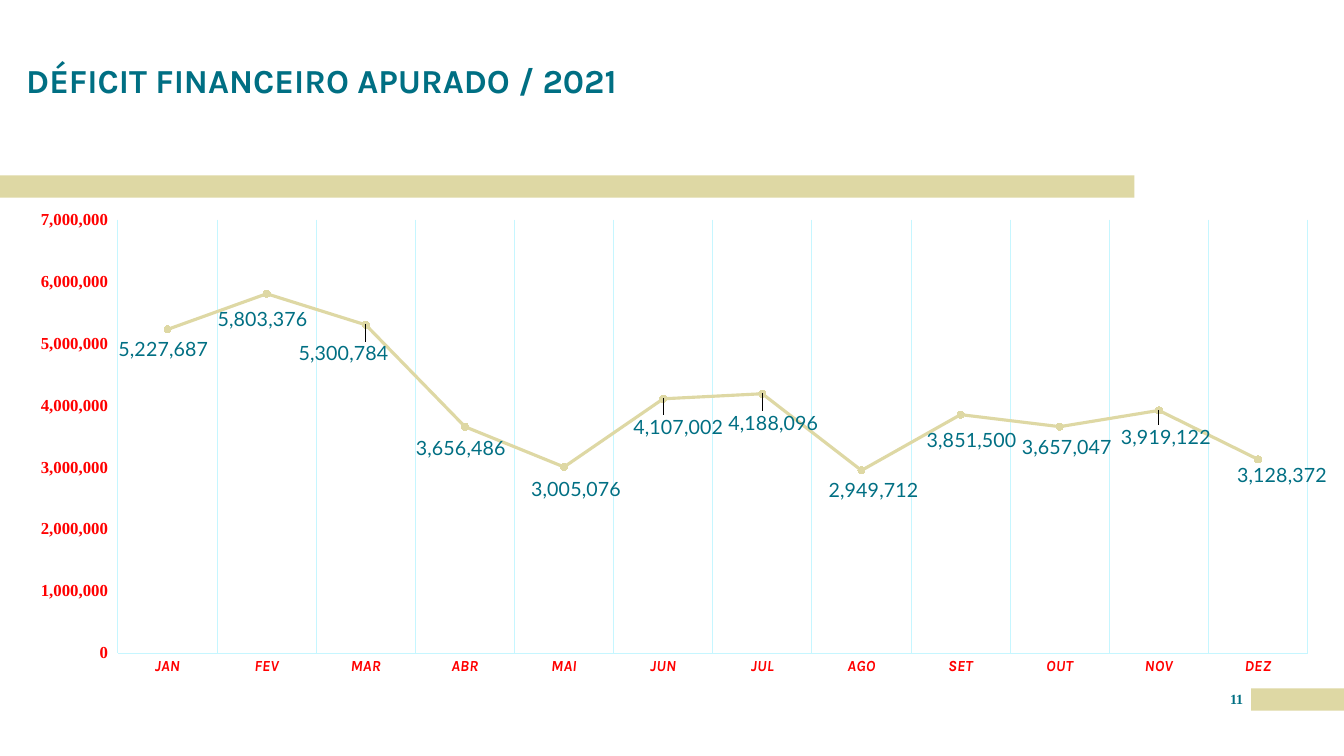
import dataclasses

import lxml.etree
import pptx
import pptx.chart.data
import pptx.dml.color
import pptx.enum.chart
import pptx.enum.shapes
import pptx.enum.text
import pptx.oxml
import pptx.oxml.ns
import pptx.util

Inches = pptx.util.Inches
Pt = pptx.util.Pt
RGBColor = pptx.dml.color.RGBColor
qn = pptx.oxml.ns.qn

TEAL = RGBColor(0x00, 0x6F, 0x83)
SAND = RGBColor(0xDE, 0xD8, 0xA4)
RED = RGBColor(0xFF, 0x00, 0x00)
ICE = RGBColor(0xC6, 0xF6, 0xFF)
WHITE = RGBColor(0xFF, 0xFF, 0xFF)
SERIF = "Times New Roman"


@dataclasses.dataclass(frozen=True)
class Box:
    left: float
    top: float
    width: float
    height: float

    def place(self) -> tuple:
        return tuple(map(Inches, dataclasses.astuple(self)))


@dataclasses.dataclass(frozen=True)
class Month:
    name: str
    value: int
    right: float
    down: float


BARS = [Box(12.41, 6.83, 0.92, 0.22), Box(0, 1.74, 11.25, 0.22)]
TITLE = Box(0.16, 0.4, 12.99, 0.83)
PAGE = Box(12.12, 6.85, 0.29, 0.25)
CHART = Box(0.15, 2, 13.08, 4.8)
PLOT = Box(1.02, 0.18, 11.8, 4.3)

MONTHS = [
    Month("JAN", 5227687, -0.04, 0.19),
    Month("FEV", 5803376, -0.04, 0.25),
    Month("MAR", 5300784, -0.22, 0.28),
    Month("ABR", 3656486, -0.04, 0.21),
    Month("MAI", 3005076, 0.12, 0.21),
    Month("JUN", 4107002, 0.15, 0.28),
    Month("JUL", 4188096, 0.11, 0.29),
    Month("AGO", 2949712, 0.12, 0.19),
    Month("SET", 3851500, 0.11, 0.25),
    Month("OUT", 3657047, 0.07, 0.2),
    Month("NOV", 3919122, 0.07, 0.26),
    Month("DEZ", 3128372, 0.24, 0.15),
]


def style(font, name: str, size: float, color: RGBColor, bold: bool = False) -> None:
    font.name = name
    font.size = Pt(size)
    font.bold = bold
    font.color.rgb = color


def stroke(line, color: RGBColor, width: float = 0.75) -> None:
    line.color.rgb = color
    line.width = Pt(width)


def layout(parent, index: int, **parts) -> None:
    for old in parent.findall(qn("c:layout")):
        parent.remove(old)
    node = pptx.oxml.parse_xml(
        f'<c:layout {pptx.oxml.ns.nsdecls("c")}><c:manualLayout/></c:layout>'
    )
    for tag, val in parts.items():
        item = lxml.etree.SubElement(node[0], qn(f"c:{tag}"))
        item.set("val", str(val))
    parent.insert(index, node)


def add_bar(slide, box: Box) -> None:
    bar = slide.shapes.add_shape(pptx.enum.shapes.MSO_SHAPE.RECTANGLE, *box.place())
    bar.shadow.inherit = False
    bar.fill.solid()
    bar.fill.fore_color.rgb = SAND
    bar.line.fill.background()


def add_title(slide, text: str) -> None:
    title = slide.shapes.title
    title.left, title.top, title.width, title.height = TITLE.place()
    stroke(title.line, WHITE)
    frame = title.text_frame
    frame.word_wrap = True
    frame.vertical_anchor = pptx.enum.text.MSO_ANCHOR.MIDDLE
    para = frame.paragraphs[0]
    para.alignment = pptx.enum.text.PP_ALIGN.LEFT
    para.line_spacing = 0.9
    run = para.add_run()
    run.text = text
    style(run.font, "Karla", 24, TEAL, True)


def add_page(slide, text: str) -> None:
    frame = slide.shapes.add_textbox(*PAGE.place()).text_frame
    frame.word_wrap = True
    frame.margin_left = frame.margin_right = 0
    frame.margin_top = frame.margin_bottom = 0
    para = frame.paragraphs[0]
    para.alignment = pptx.enum.text.PP_ALIGN.CENTER
    run = para.add_run()
    run.text = text
    style(run.font, SERIF, 10, TEAL, True)


def format_axes(chart) -> None:
    tick = pptx.enum.chart.XL_TICK_MARK
    cat = chart.category_axis
    cat.major_tick_mark = tick.NONE
    cat.has_major_gridlines = True
    stroke(cat.major_gridlines.format.line, ICE)
    stroke(cat.format.line, ICE)
    style(cat.tick_labels.font, "Karla", 11, RED, True)
    cat.tick_labels.font.italic = True
    val = chart.value_axis
    val.minimum_scale, val.maximum_scale, val.major_unit = 0, 7000000, 1000000
    val.major_tick_mark = tick.OUTSIDE
    val.has_major_gridlines = False
    val.format.line.fill.background()
    val.tick_labels.number_format = "#,##0"
    val.tick_labels.number_format_is_linked = False
    style(val.tick_labels.font, SERIF, 12, RED, True)


def format_line(series) -> None:
    series.smooth = False
    stroke(series.format.line, SAND, 2.25)
    mark = series.marker
    mark.style = pptx.enum.chart.XL_MARKER_STYLE.CIRCLE
    mark.size = 5
    mark.format.fill.solid()
    mark.format.fill.fore_color.rgb = SAND
    stroke(mark.format.line, SAND)


def format_labels(series) -> None:
    center = pptx.enum.chart.XL_LABEL_POSITION.CENTER
    labels = series.data_labels
    labels.show_value = True
    labels.number_format = "#,##0"
    labels.number_format_is_linked = False
    labels.position = center
    style(labels.font, "Lato", 14, TEAL)
    for index, month in enumerate(MONTHS):
        label = series.points[index].data_label
        label.position = center
        style(label.font, "Lato", 14, TEAL)
    for node, month in zip(labels._element.findall(qn("c:dLbl")), MONTHS):
        right = round(month.right / CHART.width, 4)
        down = round(month.down / CHART.height, 4)
        layout(node, 1, x=right, y=down)


def add_chart(slide) -> None:
    data = pptx.chart.data.CategoryChartData(number_format="#,##0")
    data.categories = [month.name for month in MONTHS]
    data.add_series("Series 1", [month.value for month in MONTHS])
    kind = pptx.enum.chart.XL_CHART_TYPE.LINE_MARKERS_STACKED
    chart = slide.shapes.add_chart(kind, *CHART.place(), data).chart
    chart.has_legend = False
    chart.has_title = False
    style(chart.font, SERIF, 10, TEAL)
    plot = chart.plots[0]
    plot.vary_by_categories = False
    format_axes(chart)
    format_line(plot.series[0])
    format_labels(plot.series[0])
    area = chart.element.find(f".//{qn('c:plotArea')}")
    layout(
        area, 0, layoutTarget="inner", xMode="edge", yMode="edge",
        x=round(PLOT.left / CHART.width, 4), y=round(PLOT.top / CHART.height, 4),
        w=round(PLOT.width / CHART.width, 4), h=round(PLOT.height / CHART.height, 4),
    )


def main() -> None:
    deck = pptx.Presentation()
    deck.slide_width, deck.slide_height = Inches(13.33), Inches(7.5)
    slide = deck.slides.add_slide(deck.slide_layouts[5])
    for box in BARS:
        add_bar(slide, box)
    add_page(slide, "11")
    add_title(slide, "DÉFICIT FINANCEIRO APURADO / 2021")
    add_chart(slide)
    deck.save("out.pptx")


if __name__ == "__main__":
    main()
